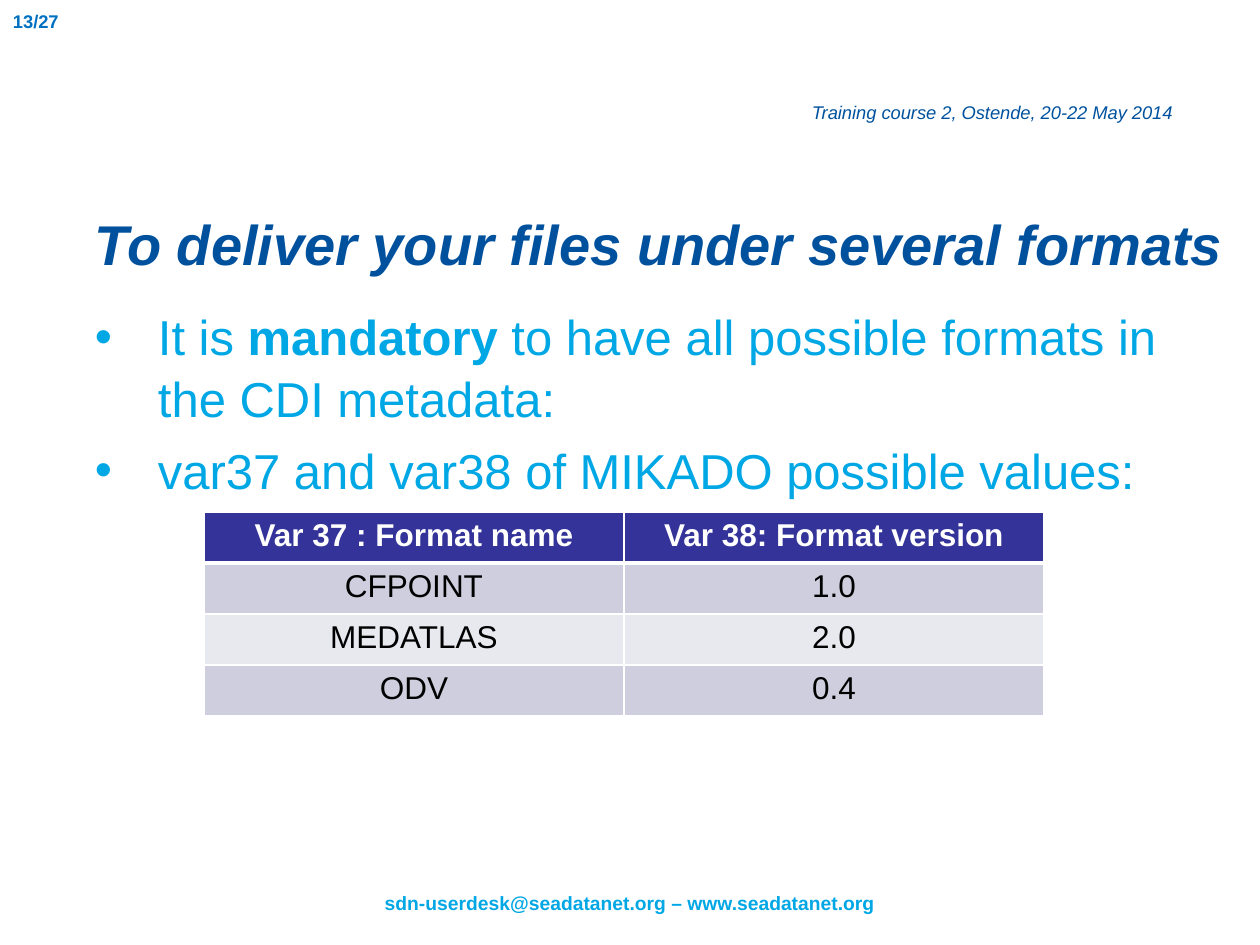
from lxml.etree import SubElement
from pptx import Presentation
from pptx.dml.color import RGBColor
from pptx.enum.text import MSO_ANCHOR, PP_ALIGN
from pptx.oxml.ns import qn
from pptx.util import Pt

PX = 914400 / 126
FONT = "Arial"
WHITE = RGBColor(0xFF, 0xFF, 0xFF)
BLACK = RGBColor(0x00, 0x00, 0x00)
NAVY = RGBColor(0x00, 0x52, 0x9E)
TITLE_BLUE = RGBColor(0x00, 0x51, 0x9D)
PAGE_BLUE = RGBColor(0x00, 0x70, 0xC0)
SKY = RGBColor(0x00, 0xA7, 0xE5)
HEADER_FILL = RGBColor(0x33, 0x33, 0x99)
BAND_FILLS = (RGBColor(0xCE, 0xCE, 0xDE), RGBColor(0xE8, 0xE8, 0xEF))

BULLETS = [
    [("It is ", False), ("mandatory", True),
     (" to have all possible formats in the CDI metadata:", False)],
    [("var37 and var38 of MIKADO possible values:", False)],
]
FORMATS = [
    ("Var 37 : Format name", "Var 38: Format version"),
    ("CFPOINT", "1.0"),
    ("MEDATLAS", "2.0"),
    ("ODV", "0.4"),
]


def px(length):
    return round(length * PX)


def add_run(paragraph, text, size, color, bold=False, italic=False):
    run = paragraph.add_run()
    run.text = text
    font = run.font
    font.name, font.size, font.bold, font.italic = FONT, Pt(size), bold, italic
    font.color.rgb = color


def add_text_frame(slide, box, margins=(0, 0), wrap=True):
    """Add a text box; margins are the horizontal and the vertical inset."""
    frame = slide.shapes.add_textbox(*map(px, box)).text_frame
    frame.word_wrap = wrap
    frame.margin_left = frame.margin_right = px(margins[0])
    frame.margin_top = frame.margin_bottom = px(margins[1])
    return frame


def add_page_number(slide, box):
    frame = add_text_frame(slide, box, (13, 6), wrap=False)
    add_run(frame.paragraphs[0], "13/27", 10.5, PAGE_BLUE, bold=True)


def add_event(slide, box):
    frame = add_text_frame(slide, box, (13, 6))
    add_run(frame.paragraphs[0], "Training course 2, Ostende, 20-22 May 2014",
            10.5, NAVY, italic=True)


def add_title(slide, box):
    frame = add_text_frame(slide, box)
    frame.margin_top = px(10)
    frame.vertical_anchor = MSO_ANCHOR.MIDDLE
    add_run(frame.paragraphs[0], "To deliver your files under several formats",
            32, TITLE_BLUE, bold=True, italic=True)


def add_bullets(slide, box):
    frame = add_text_frame(slide, box)
    for index, runs in enumerate(BULLETS):
        paragraph = frame.add_paragraph() if index else frame.paragraphs[0]
        properties = paragraph._p.get_or_add_pPr()
        properties.set("marL", str(px(63)))
        properties.set("indent", str(px(-63)))
        SubElement(properties, qn("a:buFont"), typeface=FONT)
        SubElement(properties, qn("a:buChar"), char="•")
        paragraph.line_spacing = 1.05
        if index:
            paragraph.space_before = Pt(5.6)
        for text, bold in runs:
            add_run(paragraph, text, 28, SKY, bold=bold)


def add_borders(cell, bottom_width):
    properties = cell._tc.get_or_add_tcPr()
    for tag, width in (("lnL", 1), ("lnR", 1), ("lnT", 1), ("lnB", bottom_width)):
        line = SubElement(properties, qn(f"a:{tag}"), w=str(Pt(width)))
        fill = SubElement(line, qn("a:solidFill"))
        SubElement(fill, qn("a:srgbClr"), val=str(WHITE))


def add_format_table(slide, box):
    shape = slide.shapes.add_table(len(FORMATS), len(FORMATS[0]), *map(px, box))
    for row_index, values in enumerate(FORMATS):
        header = row_index == 0
        for column_index, text in enumerate(values):
            cell = shape.table.cell(row_index, column_index)
            add_borders(cell, 3 if header else 1)
            cell.fill.solid()
            cell.fill.fore_color.rgb = (
                HEADER_FILL if header else BAND_FILLS[(row_index - 1) % 2])
            paragraph = cell.text_frame.paragraphs[0]
            paragraph.alignment = PP_ALIGN.CENTER
            add_run(paragraph, text, 18, WHITE if header else BLACK, bold=header)


def add_footer(slide, box):
    paragraph = add_text_frame(slide, box).paragraphs[0]
    paragraph.alignment = PP_ALIGN.CENTER
    add_run(paragraph, "sdn-userdesk@seadatanet.org – www.seadatanet.org",
            11, SKY, bold=True)


def main():
    presentation = Presentation()
    presentation.slide_width, presentation.slide_height = px(1260), px(945)
    slide = presentation.slides.add_slide(presentation.slide_layouts[6])
    add_footer(slide, (0, 891, 1260, 23))
    add_event(slide, (799, 95, 456, 35))
    add_page_number(slide, (0, 4, 84, 35))
    add_title(slide, (95, 204, 1142, 68))
    add_bullets(slide, (95, 304, 1142, 546))
    add_format_table(slide, (204, 512, 840, 204))
    presentation.save("out.pptx")


if __name__ == "__main__":
    main()
